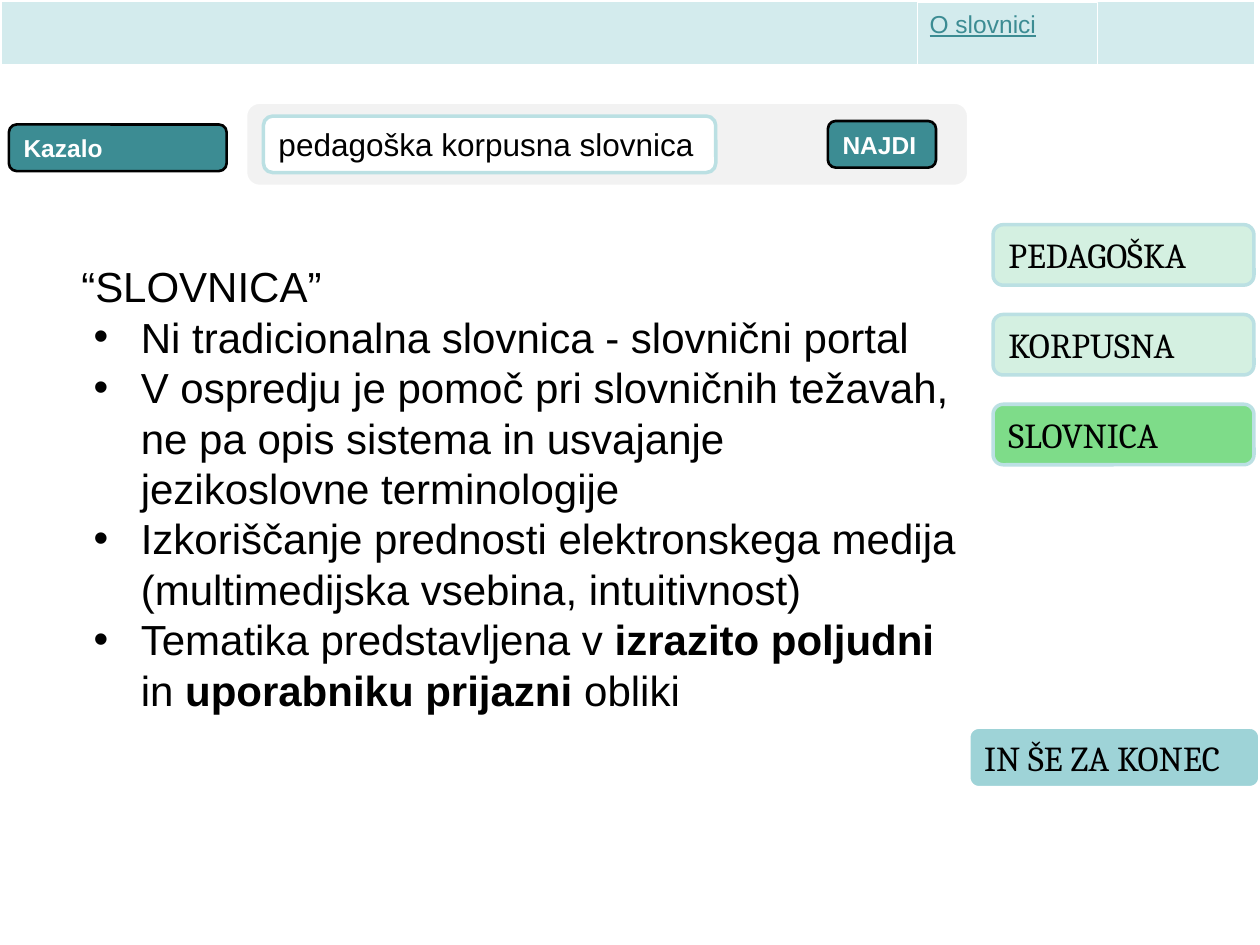
from dataclasses import dataclass

from lxml import etree
from pptx import Presentation
from pptx import util as u
from pptx.dml.color import RGBColor
from pptx.enum import shapes, text
from pptx.oxml.ns import qn

COLORS = {
    "white": "FFFFFF", "black": "000000", "grey": "F2F2F2", "teal": "3C8C93",
    "band": "D3EBED", "edge": "BBE0E3", "mint": "D4F0E1", "green": "7EDC89",
    "aqua": "9ED3D7",
}
ROUND = shapes.MSO_SHAPE.ROUNDED_RECTANGLE
RECT = shapes.MSO_SHAPE.RECTANGLE


@dataclass
class Box:
    left: float
    top: float
    width: float
    height: float
    fill: str
    line: str = "white"
    weight: float = 2
    kind: int = ROUND
    label: str = ""
    size: int = 20
    font: str = "Cambria"
    color: str = "black"
    bold: bool = False
    underline: bool = False
    anchor: int = text.MSO_ANCHOR.MIDDLE


def rgb(name: str) -> RGBColor:
    return RGBColor.from_string(COLORS[name])


def style_run(r, size: int, font: str, color: str, bold: bool = False) -> None:
    r.font.size = u.Pt(size)
    r.font.name = font
    r.font.bold = bold
    r.font.color.rgb = rgb(color)


def draw_box(s, box: Box):
    sp = s.shapes.add_shape(box.kind, u.Cm(box.left), u.Cm(box.top),
                            u.Cm(box.width), u.Cm(box.height))
    sp.shadow.inherit = False
    sp.fill.solid()
    sp.fill.fore_color.rgb = rgb(box.fill)
    sp.line.color.rgb = rgb(box.line)
    sp.line.width = u.Pt(box.weight)
    tf = sp.text_frame
    tf.word_wrap = True
    tf.vertical_anchor = box.anchor
    if box.label:
        tf.text = box.label
        p = tf.paragraphs[0]
        p.alignment = text.PP_ALIGN.LEFT
        style_run(p.runs[0], box.size, box.font, box.color, box.bold)
        if box.underline:
            p.runs[0].font.underline = True
    return sp


def add_paragraph(p, parts: list[tuple[str, bool]], margin: float, bullet: bool) -> None:
    p.alignment = text.PP_ALIGN.LEFT
    p.level = 2 if bullet else 1
    p.line_spacing = u.Pt(28.8)
    p.space_before = u.Pt(0)
    pPr = p._p.get_or_add_pPr()
    pPr.set("marL", str(u.Cm(margin)))
    pPr.set("indent", str(-u.Cm(0.95)))
    if bullet:
        etree.SubElement(pPr, qn("a:buFont")).set("typeface", "Arial")
        etree.SubElement(pPr, qn("a:buChar")).set("char", "•")
    for words, bold in parts:
        r = p.add_run()
        r.text = words
        style_run(r, 24, "Arial", "black", bold)


def draw_body(s, box: Box, title: str, points: list[list[tuple[str, bool]]]) -> None:
    tf = draw_box(s, box).text_frame
    tf.margin_top = u.Cm(1.5)
    add_paragraph(tf.paragraphs[0], [(title, False)], 2.24, False)
    for parts in points:
        add_paragraph(tf.add_paragraph(), parts, 2.49, True)


BUTTON = dict(fill="teal", line="black", weight=1.5, size=14, font="Arial",
              color="white", bold=True)
TOP_BAR = [
    Box(4.95, 2.06, 14.58, 1.7, "grey"),
    Box(0.18, 2.51, 4.39, 0.94, label="Kazalo", **BUTTON),
    Box(16.69, 2.44, 2.18, 0.94, label="NAJDI", **BUTTON),
    Box(-0.03, -0.03, 25.4, 1.4, "band", weight=4.5, kind=RECT),
    Box(18.49, 0.05, 3.63, 1.24, "band", weight=0.25, kind=RECT, label="O slovnici",
        size=14, font="Arial", color="teal", underline=True,
        anchor=text.MSO_ANCHOR.TOP),
    Box(5.31, 2.34, 9.12, 1.14, "white", "edge", label="pedagoška korpusna slovnica",
        size=18, font="Arial"),
]
BODY = Box(0.1, 3.76, 19.43, 14.96, "white", kind=RECT, anchor=text.MSO_ANCHOR.TOP)
POINTS = [
    [("Ni tradicionalna slovnica - slovnični portal", False)],
    [("V ospredju je pomoč pri slovničnih težavah, ne pa opis sistema in usvajanje "
      "jezikoslovne terminologije", False)],
    [("Izkoriščanje prednosti elektronskega medija (multimedijska vsebina, "
      "intuitivnost)", False)],
    [("Tematika predstavljena v ", False), ("izrazito poljudni ", True), ("in ", False),
     ("uporabniku prijazni ", True), ("obliki", False)],
]
MENU = [("PEDAGOŠKA", "mint"), ("KORPUSNA", "mint"), ("SLOVNICA", "green")]


def main() -> None:
    """Build the grammar portal slide and save it."""
    prs = Presentation()
    prs.slide_width, prs.slide_height = u.Cm(25.4), u.Cm(19.05)
    s = prs.slides.add_slide(prs.slide_layouts[6])
    for box in TOP_BAR:
        draw_box(s, box)
    draw_body(s, BODY, "“SLOVNICA”", POINTS)
    for i, (label, fill) in enumerate(MENU):
        draw_box(s, Box(20.02, 4.53 + 1.81 * i, 5.26, 1.22, fill, "edge", label=label))
    draw_box(s, Box(19.53, 14.66, 5.87, 1.22, "aqua", label="IN ŠE ZA KONEC"))
    prs.save("out.pptx")


if __name__ == "__main__":
    main()
